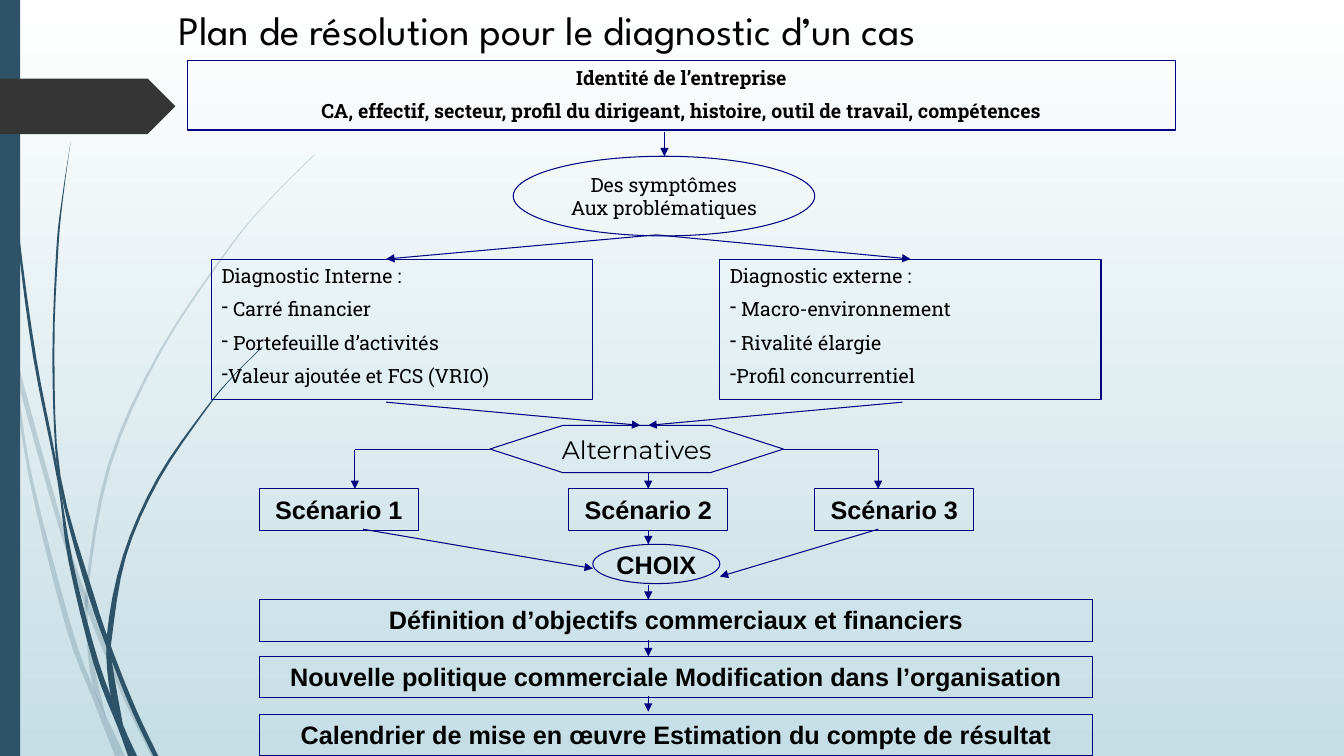
"""Build a slide that charts the steps of a company diagnosis."""
from pptx import Presentation
from pptx import util as u
from pptx.dml.color import RGBColor
from pptx.enum import shapes, text
from pptx.oxml.ns import qn
from lxml import etree

NAVY, TEAL, BLACK = "000080", "2E5369", "000000"
Kind, Align, Anchor = shapes.MSO_SHAPE, text.PP_ALIGN, text.MSO_ANCHOR


def tint(fill, colour):
    fill.solid()
    fill.fore_color.rgb = RGBColor.from_string(colour)


def write(para, words, font, size, bold=False):
    span = para.add_run()
    span.text = words
    span.font.name, span.font.size, span.font.bold = font, u.Pt(size), bold
    tint(span.font.fill, BLACK)


deck = Presentation()
deck.slide_width, deck.slide_height = u.Inches(13.33), u.Inches(7.5)
page = deck.slides.add_slide(deck.slide_layouts[5])
backdrop = page.background.fill
backdrop.gradient()
backdrop.gradient_angle = 270
for stop, colour in zip(backdrop.gradient_stops, ("FFFFFF", "C5DEE5")):
    stop.color.rgb = RGBColor.from_string(colour)

# Each strand: opacity in percent, then its two edges from top to bottom.
strands = [
    (20, [(0, 2.82), (0.14, 3.45), (0.62, 5.2), (0.92, 6.07), (1.27, 6.92), (1.55, 7.5)],
     [(0, 2.99), (0.17, 3.76), (0.58, 5.22), (0.88, 6.1), (1.23, 6.94), (1.5, 7.5)]),
    (20, [(0.11, 3.5), (0.17, 3.76), (0.31, 4.69), (0.7, 6.19), (0.93, 6.83), (1.24, 7.5)],
     [(0.11, 3.5), (0.28, 4.7), (0.65, 6.21), (0.92, 6.93), (1.14, 7.5)]),
    (20, [(3.12, 1.53), (2.68, 1.97), (2.28, 2.44), (1.58, 3.48), (1.07, 4.61),
          (0.85, 5.84), (0.87, 6.46), (0.93, 6.83), (1.05, 7.11)],
     [(3.12, 1.54), (2.68, 1.98), (2.29, 2.45), (1.6, 3.49), (1.1, 4.62),
      (0.88, 5.84), (0.91, 6.46), (1.05, 7.11)]),
    (100, [(0.03, 0), (0.07, 1.1), (0.17, 2.33), (0.33, 3.55), (0.57, 4.77),
           (0.68, 5.57), (0.93, 6.59), (1.17, 7.22), (1.27, 7.5)],
     [(0.04, 0), (0.08, 1.09), (0.19, 2.32), (0.36, 3.55), (0.55, 4.53),
      (0.72, 5.56), (0.98, 6.57), (1.22, 7.19), (1.36, 7.5)]),
    (100, [(0.7, 1.41), (0.62, 1.93), (0.56, 2.45), (0.52, 3.49), (0.55, 4.49),
           (0.64, 5.05), (0.88, 5.92), (1.11, 6.56), (1.32, 7.08), (1.52, 7.5)],
     [(0.7, 1.41), (0.63, 1.93), (0.58, 2.45), (0.54, 3.49), (0.6, 4.72),
      (0.93, 5.9), (1.13, 6.49), (1.36, 7.06), (1.57, 7.5)]),
    (100, [(2.6, 3.44), (2.31, 3.73), (2.04, 4.05), (1.56, 4.74), (1.22, 5.51),
           (1.06, 6.31), (1.1, 6.91), (1.22, 7.19)],
     [(2.61, 3.44), (2.31, 3.74), (2.05, 4.06), (1.58, 4.76), (1.25, 5.52),
      (1.11, 6.33), (1.11, 6.56), (1.22, 7.19)]),
]
for opacity, *edges in strands:
    outline = []
    for edge, order in zip(edges, (1, -1)):
        knots = [edge[0], *edge, edge[-1]]
        curve = []
        for a, b, c, d in zip(knots, knots[1:], knots[2:], knots[3:]):
            for t in (0, 0.25, 0.5, 0.75):
                curve.append([u.Inches(q + t * (r - p) / 2
                                       + t * t * (2 * p - 5 * q + 4 * r - s) / 2
                                       + t ** 3 * (3 * q - p - 3 * r + s) / 2)
                              for p, q, r, s in zip(a, b, c, d)])
        curve.append([u.Inches(value) for value in edge[-1]])
        outline += curve[::order]
    builder = page.shapes.build_freeform(*outline[0])
    builder.add_line_segments(outline[1:], close=True)
    strand = builder.convert_to_shape()
    strand.shadow.inherit = False
    tint(strand.fill, TEAL)
    strand.line.fill.background()
    if opacity < 100:
        hue = strand.fill._xPr.find(qn("a:solidFill"))[0]
        etree.SubElement(hue, qn("a:alpha"), val=str(opacity * 1000))

for kind, colour, place in [(Kind.RECTANGLE, TEAL, (0, 0, 0.2, 7.5)),
                            (Kind.PENTAGON, "353535", (0, 0.78, 1.74, 0.55))]:
    band = page.shapes.add_shape(kind, *map(u.Inches, place))
    band.shadow.inherit = False
    tint(band.fill, colour)
    band.line.fill.background()

title = page.shapes.title
title.left, title.top, title.width, title.height = map(u.Inches, (1.67, 0, 10, 0.52))
title.text_frame.auto_size = text.MSO_AUTO_SIZE.NONE
title.text_frame.vertical_anchor = Anchor.TOP
heading = title.text_frame.paragraphs[0]
heading.alignment = Align.LEFT
write(heading, "Plan de résolution pour le diagnostic d’un cas", "League Spartan", 28.8)

slab, sans = ("Roboto Slab", 14), ("Arial", 18, True)
steps = [
    (Kind.RECTANGLE, (1.86, 0.6, 9.8, 0.69), ("Roboto Slab", 14, True),
     ["Identité de l’entreprise",
      "CA, effectif, secteur, profil du dirigeant, histoire, outil de travail, compétences"]),
    (Kind.OVAL, (5.09, 1.55, 2.99, 0.79), slab, ["Des symptômes", "Aux problématiques"]),
    (Kind.RECTANGLE, (2.1, 2.57, 3.78, 1.39), slab,
     ["Diagnostic Interne :", "- Carré financier", "- Portefeuille d’activités",
      "-Valeur ajoutée et FCS (VRIO)"]),
    (Kind.RECTANGLE, (7.14, 2.57, 3.78, 1.39), slab,
     ["Diagnostic externe :", "- Macro-environnement", "- Rivalité élargie",
      "-Profil concurrentiel"]),
    (Kind.HEXAGON, (4.86, 4.22, 2.91, 0.47), ("Montserrat", 18), ["Alternatives"]),
    (Kind.OVAL, (5.88, 5.4, 1.26, 0.39), sans, ["CHOIX"]),
]
for number, left in enumerate((2.57, 5.64, 8.08), 1):
    steps.append((Kind.RECTANGLE, (left, 4.85, 1.58, 0.41), sans, [f"Scénario {number}"]))
for top, words in [
    (5.95, "Définition d’objectifs commerciaux et financiers"),
    (6.51, "Nouvelle politique commerciale Modification dans l’organisation"),
    (7.09, "Calendrier de mise en œuvre Estimation du compte de résultat"),
]:
    steps.append((Kind.RECTANGLE, (2.57, top, 8.27, 0.41), sans, [words]))

boxes = {}
for kind, place, style, lines in steps:
    box = page.shapes.add_shape(kind, *map(u.Inches, place))
    boxes[lines[0]] = box
    box.shadow.inherit = False
    box.fill.background()
    tint(box.line.fill, NAVY)
    box.line.width = u.Pt(0.75)
    if kind == Kind.HEXAGON:
        box.adjustments[0] = 1.54
    frame = box.text_frame
    boxed = kind == Kind.RECTANGLE
    frame.word_wrap = boxed
    frame.vertical_anchor = Anchor.TOP if boxed else Anchor.MIDDLE
    if boxed:
        frame.auto_size = text.MSO_AUTO_SIZE.SHAPE_TO_FIT_TEXT
    for index, line in enumerate(lines):
        para = frame.paragraphs[0] if index == 0 else frame.add_paragraph()
        para.alignment = Align.LEFT if len(lines) == 4 else Align.CENTER
        if boxed and index:
            para.space_before = u.Pt(7)
        if line.startswith("-"):
            etree.SubElement(para._p.get_or_add_pPr(), qn("a:buChar"), char="-")
        write(para, line.removeprefix("-"), *style)

external, middle = boxes["Diagnostic externe :"], boxes["Scénario 2"]
arrows = [
    ((6.59, 1.31), (6.59, 1.55)), ((6.51, 2.33), (3.83, 2.57)),
    ((6.51, 2.33), (9.03, 2.57), None, external), ((3.83, 3.99), (6.35, 4.22)),
    ((8.95, 3.99), (6.43, 4.22)), ((3.52, 4.46), (3.52, 4.85)),
    ((8.71, 4.46), (8.71, 4.85)), ((6.43, 4.69), (6.43, 4.85), None, middle),
    ((6.43, 5.25), (6.43, 5.4), middle), ((3.6, 5.25), (5.88, 5.64)),
    ((8.71, 5.25), (7.14, 5.72)), ((6.43, 5.8), (6.43, 5.95)),
    ((6.43, 6.35), (6.43, 6.51)), ((6.43, 6.9), (6.43, 7.06)),
]
plain = [((4.86, 4.46), (3.52, 4.46)), ((7.77, 4.46), (8.71, 4.46))]
for start, end, *joined in arrows + plain:
    link = page.shapes.add_connector(shapes.MSO_CONNECTOR.STRAIGHT,
                                     *map(u.Inches, start + end))
    source, target = (joined + [None, None])[:2]
    if source:
        link.begin_connect(source, 2)
    if target:
        link.end_connect(target, 0)
    tint(link.line.fill, NAVY)
    link.line.width = u.Pt(0.75)
    if (start, end) not in plain:
        etree.SubElement(link.line._get_or_add_ln(), qn("a:tailEnd"), type="triangle")
    etree.SubElement(link._element.spPr, qn("a:effectLst"))

deck.save("out.pptx")
